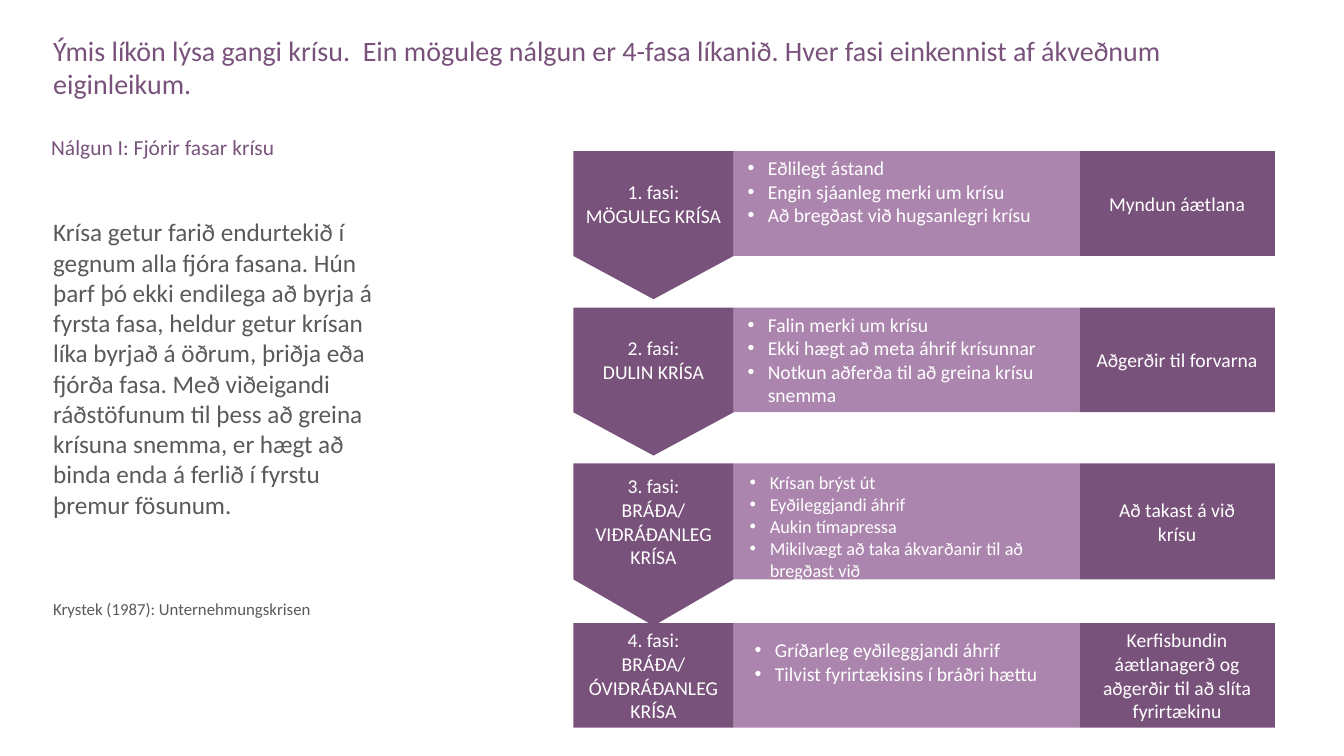
from lxml import etree
from pptx import Presentation
from pptx.dml.color import RGBColor
from pptx.enum.shapes import MSO_SHAPE as Shape
from pptx.enum.text import MSO_ANCHOR as Anchor, MSO_AUTO_SIZE as Fit, PP_ALIGN as Align
from pptx.oxml.ns import qn
from pptx.util import Cm, Pt

PLUM = RGBColor(0x79, 0x52, 0x7B)
LILAC = RGBColor(0xAB, 0x85, 0xAD)
GREY = RGBColor(0x59, 0x5A, 0x59)
WHITE = RGBColor(0xFF, 0xFF, 0xFF)

LEFT, PHASE, SIGNS, ACTION = 14.45, 4.04, 8.71, 4.93

ROWS = [
    dict(top=3.81, high=2.64, tip=1.09,
         phase=["1. fasi:", "MÖGULEG KRÍSA"],
         signs=["Eðlilegt ástand", "Engin sjáanleg merki um krísu",
                "Að bregðast við hugsanlegri krísu"],
         action="Myndun áætlana"),
    dict(top=7.75, high=2.64, tip=1.09,
         phase=["2. fasi:", "DULIN KRÍSA"],
         signs=["Falin merki um krísu", "Ekki hægt að meta áhrif krísunnar",
                "Notkun aðferða til að greina krísu snemma"],
         action="Aðgerðir til forvarna"),
    dict(top=11.68, high=2.92, tip=1.17,
         phase=["3. fasi:", "BRÁÐA/", "VIÐRÁÐANLEG KRÍSA"],
         signs=["Krísan brýst út", "Eyðileggjandi áhrif", "Aukin tímapressa",
                "Mikilvægt að taka ákvarðanir til að bregðast við"],
         action="Að takast á við krísu", size=13, drop=0.2, inset=0.4, side=0.7),
    dict(top=15.7, high=2.64, tip=0,
         phase=["4. fasi:", "BRÁÐA/ ÓVIÐRÁÐANLEG KRÍSA"],
         signs=["Gríðarleg eyðileggjandi áhrif", "Tilvist fyrirtækisins í bráðri hættu"],
         action="Kerfisbundin áætlanagerð og aðgerðir til að slíta fyrirtækinu",
         drop=0.38, inset=0.53),
]


def write(shape, lines, size, color, align=Align.LEFT, anchor=Anchor.TOP,
          pads=(0.25, 0.13, 0.25, 0.13), dots=False):
    frame = shape.text_frame
    frame.text = "\n".join(lines)
    frame.word_wrap = True
    frame.auto_size = Fit.NONE
    frame.vertical_anchor = anchor
    frame.margin_left, frame.margin_top, frame.margin_right, frame.margin_bottom = map(Cm, pads)
    for para in frame.paragraphs:
        para.alignment = align
        if dots:
            props = para._p.get_or_add_pPr()
            props.set("marL", str(Cm(0.51)))
            props.set("indent", str(-Cm(0.51)))
            etree.SubElement(props, qn("a:buFont")).set("typeface", "Arial")
            etree.SubElement(props, qn("a:buChar")).set("char", "•")
        for run in para.runs:
            run.font.name = "Calibri"
            run.font.size = Pt(size)
            run.font.color.rgb = color
    return frame


def paint(shape, color):
    shape.shadow.inherit = False
    shape.fill.solid()
    shape.fill.fore_color.rgb = color
    shape.line.fill.background()
    return shape


def block(slide, left, top, wide, high, color):
    box = slide.shapes.add_shape(Shape.RECTANGLE, Cm(left), Cm(top), Cm(wide), Cm(high))
    return paint(box, color)


def arrow(slide, left, top, wide, high, tip):
    pen = slide.shapes.build_freeform(Cm(left), Cm(top))
    edge = [(left + wide, top), (left + wide, top + high),
            (left + wide / 2, top + high + tip), (left, top + high)]
    pen.add_line_segments([(Cm(x), Cm(y)) for x, y in edge])
    return paint(pen.convert_to_shape(), PLUM)


def stage(slide, left, top, high, tip, phase, signs, action,
          size=14, drop=0.13, inset=0.35, side=0.3):
    mid = left + PHASE
    end = mid + SIGNS
    list_box = block(slide, mid, top, SIGNS, high, LILAC)
    write(list_box, signs, size, WHITE, pads=(inset, drop, 0.25, 0), dots=True)
    if tip:
        head = arrow(slide, left, top, PHASE, high, tip)
    else:
        head = block(slide, left, top, PHASE, high, PLUM)
    write(head, phase, 14, WHITE, Align.CENTER, Anchor.MIDDLE, (0.1, 0, 0.1, tip))
    step = block(slide, end, top, ACTION, high, PLUM)
    write(step, [action], 14, WHITE, Align.CENTER, Anchor.MIDDLE, (side, 0, side, 0))


def heading(slide, left, top, wide, high):
    title = slide.shapes.title
    title.left, title.top, title.width, title.height = map(Cm, (left, top, wide, high))
    write(title, ["Ýmis líkön lýsa gangi krísu.  Ein möguleg nálgun er 4-fasa líkanið. "
                  "Hver fasi einkennist af ákveðnum eiginleikum."], 20, PLUM)


def subhead(slide, left, top, wide, high):
    box = slide.shapes.add_textbox(Cm(left), Cm(top), Cm(wide), Cm(high))
    frame = write(box, ["Nálgun I: Fjórir fasar krísu"], 15.3, PLUM)
    frame.paragraphs[0].line_spacing = 0.7


def story(slide, left, top, wide, high):
    box = slide.shapes.add_textbox(Cm(left), Cm(top), Cm(wide), Cm(high))
    frame = write(box, [
        "Krísa getur farið endurtekið í gegnum alla fjóra fasana. Hún þarf þó ekki "
        "endilega að byrja á fyrsta fasa, heldur getur krísan líka byrjað á öðrum, "
        "þriðja eða fjórða fasa. Með viðeigandi ráðstöfunum til þess að greina krísuna "
        "snemma, er hægt að binda enda á ferlið í fyrstu þremur fösunum.",
        "Krystek (1987): Unternehmungskrisen"], 18, GREY)
    source = frame.paragraphs[1]
    source.space_before = Pt(57)
    source.runs[0].font.size = Pt(12)


def main():
    deck = Presentation()
    deck.slide_width, deck.slide_height = Cm(33.87), Cm(19.05)
    slide = deck.slides.add_slide(deck.slide_layouts[5])
    heading(slide, 1.09, 0.71, 31.85, 2.49)
    subhead(slide, 1.04, 3.43, 31.9, 0.71)
    story(slide, 1.09, 5.33, 8.86, 11.5)
    for row in ROWS:
        stage(slide, LEFT, **row)
    deck.save("out.pptx")


if __name__ == "__main__":
    main()
